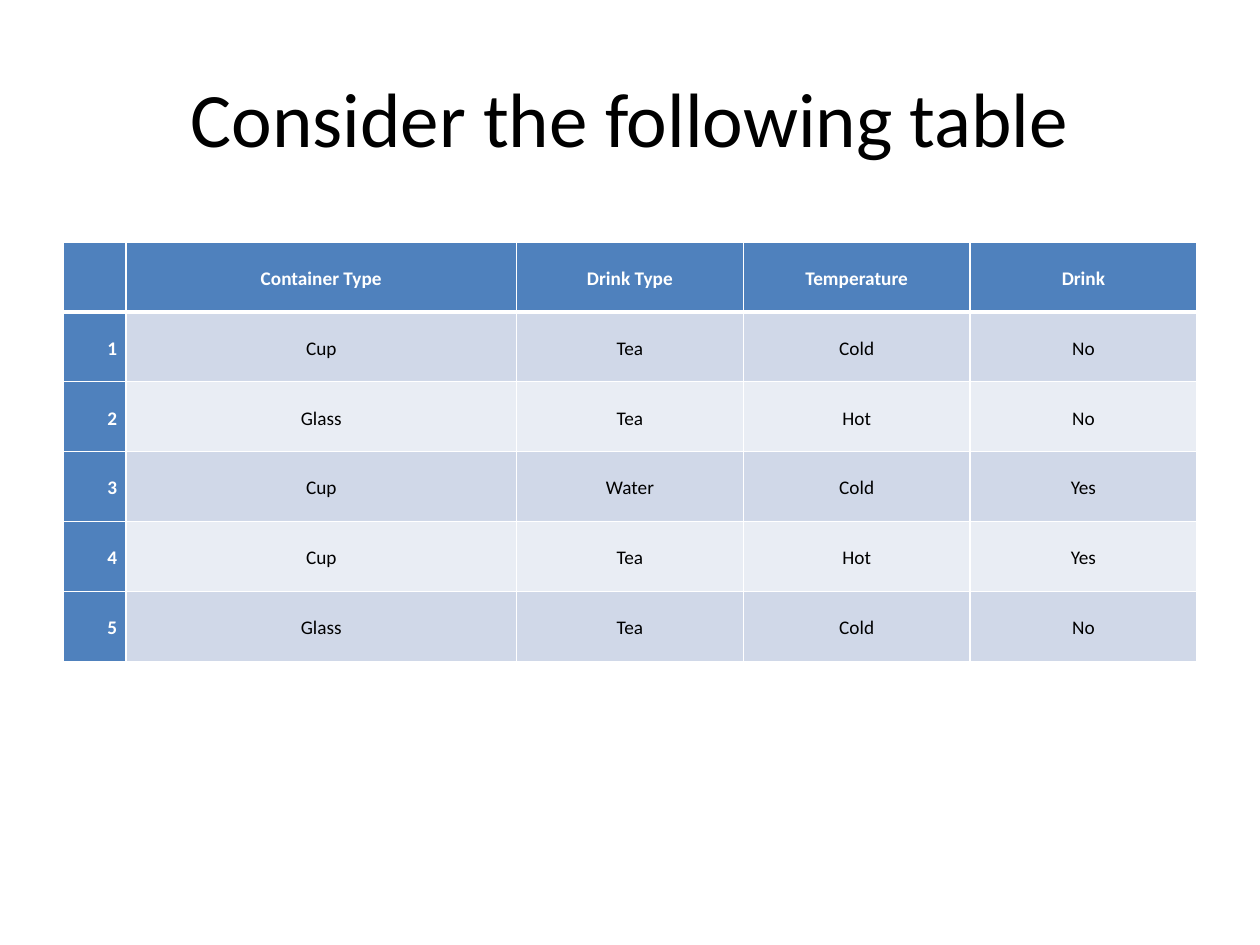
from lxml.etree import SubElement
from pptx import Presentation
from pptx.dml.color import RGBColor
from pptx.enum.text import MSO_ANCHOR, PP_ALIGN
from pptx.oxml.ns import qn
from pptx.util import Inches, Pt

COLORS = {
    "header": "4F81BD",
    "band_dark": "D0D8E8",
    "band_light": "E9EDF4",
    "white": "FFFFFF",
    "black": "000000",
}
FONT = "Calibri"
COL_WIDTHS = [0.5, 3.1, 1.8, 1.8, 1.8]
ROWS = [
    ["", "Container Type", "Drink Type", "Temperature", "Drink"],
    ["1", "Cup", "Tea", "Cold", "No"],
    ["2", "Glass", "Tea", "Hot", "No"],
    ["3", "Cup", "Water", "Cold", "Yes"],
    ["4", "Cup", "Tea", "Hot", "Yes"],
    ["5", "Glass", "Tea", "Cold", "No"],
]


def rgb(name):
    return RGBColor.from_string(COLORS[name])


def write(tf, text, size=11, color="black", bold=False,
          align=PP_ALIGN.CENTER, spacing=None):
    p = tf.paragraphs[0]
    p.alignment = align
    p.line_spacing = spacing
    p.font.size = Pt(size)
    if text:
        r = p.add_run()
        r.text = text
        r.font.name = FONT
        r.font.size = Pt(size)
        r.font.bold = bold
        r.font.color.rgb = rgb(color)


def set_borders(cell, **widths):
    """Draw white cell borders; widths in points by side: L, R, T, B."""
    tcPr = cell._tc.get_or_add_tcPr()
    for side in "LRTB":
        ln = SubElement(tcPr, qn(f"a:ln{side}"), w=str(Pt(widths.get(side, 1))))
        fill = SubElement(ln, qn("a:solidFill"))
        SubElement(fill, qn("a:srgbClr"), val=COLORS["white"])


def add_title(s, text, left, top, width, height):
    sp = s.shapes.title
    sp.left, sp.top = Inches(left), Inches(top)
    sp.width, sp.height = Inches(width), Inches(height)
    sp.text_frame.vertical_anchor = MSO_ANCHOR.MIDDLE
    write(sp.text_frame, text, size=44)


def format_cell(cell, text, row, col):
    is_header = row == 0 or col == 0
    band = "band_dark" if row % 2 else "band_light"

    # A thick rule separates the header from the body
    set_borders(cell, B=3 if row == 0 else 1, T=3 if row == 1 else 1)
    cell.fill.solid()
    cell.fill.fore_color.rgb = rgb("header" if is_header else band)
    cell.vertical_anchor = MSO_ANCHOR.MIDDLE
    cell.margin_left = cell.margin_right = Inches(0.07)
    cell.margin_top = cell.margin_bottom = 0
    write(cell.text_frame, text, bold=is_header, spacing=1.15,
          color="white" if is_header else "black",
          align=PP_ALIGN.RIGHT if col == 0 and row else PP_ALIGN.CENTER)


def add_drinks_table(s, left, top, width, height):
    table = s.shapes.add_table(len(ROWS), len(COL_WIDTHS), Inches(left),
                               Inches(top), Inches(width), Inches(height)).table
    table.first_col = True
    for column, share in zip(table.columns, COL_WIDTHS):
        column.width = Inches(width * share / sum(COL_WIDTHS))
    for row, values in enumerate(ROWS):
        table.rows[row].height = Inches(height / len(ROWS))
        for col, text in enumerate(values):
            format_cell(table.cell(row, col), text, row, col)


def main():
    prs = Presentation()
    prs.slide_width, prs.slide_height = Inches(10), Inches(7.5)
    s = prs.slides.add_slide(prs.slide_layouts[5])  # title only

    add_title(s, "Consider the following table", 0.5, 0.3, 9, 1.25)
    add_drinks_table(s, 0.5, 1.92, 9, 3.33)

    prs.save("out.pptx")


if __name__ == "__main__":
    main()
